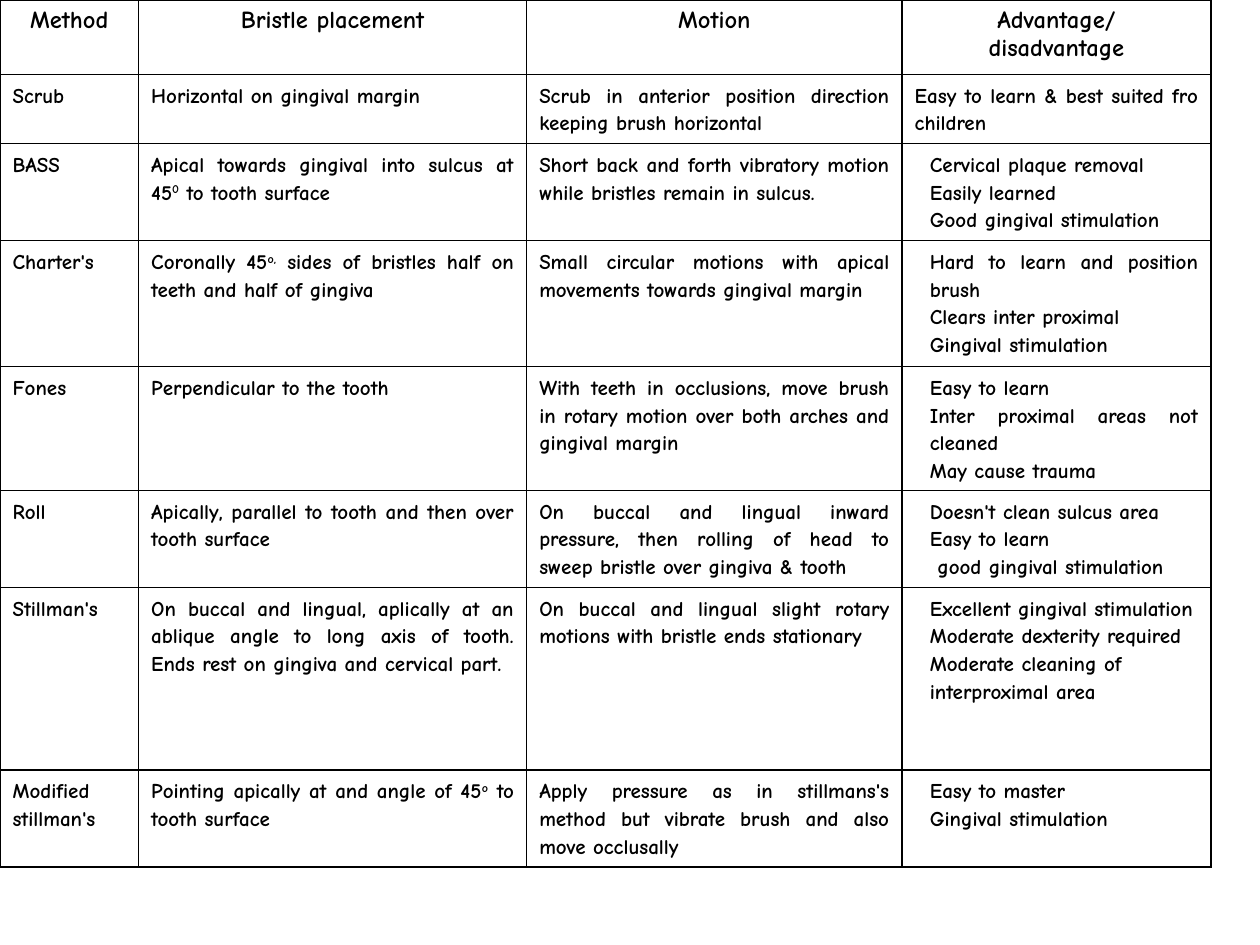
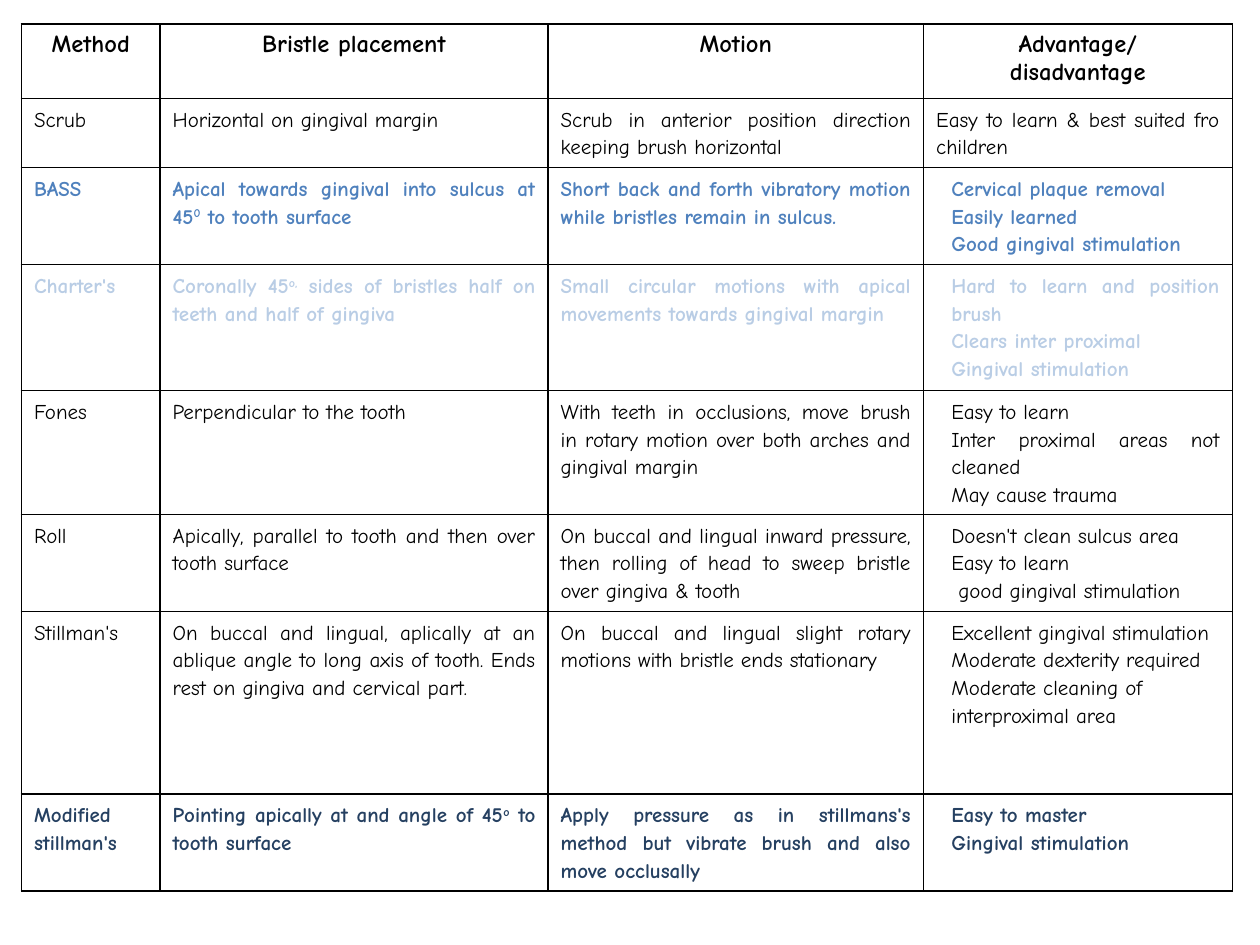
from lxml import etree
from pptx import Presentation
from pptx.dml.color import RGBColor
from pptx.enum.text import PP_ALIGN as Align
from pptx.oxml.ns import qn
from pptx.util import Inches, Pt

FONT = "Comic Neue"
BLACK, WHITE = "000000", "FFFFFF"
BLUE, PALE_BLUE, NAVY = "4F81BD", "B9CDE5", "254061"
SLIDE_WIDTH, SLIDE_HEIGHT = 10, 7.5
COLUMN_WIDTHS = [1.1, 3.08, 2.98, 2.45]
ROW_HEIGHTS = [0.59, 0.55, 0.77, 1, 0.84, 0.77, 1.45, 0.77]
LIST_INDENT = 0.12

# Each cell is a list of paragraphs; ^ marks the start and end of superscript.
HEADINGS = [["Method"], ["Bristle placement"], ["Motion"],
            ["Advantage/", "disadvantage"]]
METHODS = [
    [["Scrub"], ["Horizontal on gingival margin"],
     ["Scrub in anterior position direction keeping brush horizontal"],
     ["Easy to learn & best suited fro children"]],
    [["BASS"], ["Apical towards gingival into sulcus at 45^0^ to tooth surface"],
     ["Short back and forth vibratory motion while bristles remain in sulcus."],
     ["Cervical plaque removal", "Easily learned", "Good gingival stimulation"]],
    [["Charter's"],
     ["Coronally 45^o,^ sides of bristles half on teeth and half of gingiva"],
     ["Small circular motions with apical movements towards gingival margin"],
     ["Hard to learn and position brush", "Clears inter proximal",
      "Gingival stimulation"]],
    [["Fones"], ["Perpendicular to the tooth"],
     ["With teeth in occlusions, move brush in rotary motion over both arches "
      "and gingival margin"],
     ["Easy to learn", "Inter proximal areas not cleaned", "May cause trauma"]],
    [["Roll"], ["Apically, parallel to tooth and then over tooth surface"],
     ["On buccal and lingual inward pressure, then rolling of head to sweep "
      "bristle over gingiva & tooth"],
     ["Doesn't clean sulcus area", "Easy to learn", " good gingival stimulation"]],
    [["Stillman's"],
     ["On buccal and lingual, aplically at an ablique angle to long axis of "
      "tooth. Ends rest on gingiva and cervical part."],
     ["On buccal and lingual slight rotary motions with bristle ends stationary"],
     ["Excellent gingival stimulation", "Moderate dexterity required",
      "Moderate cleaning of interproximal area"]],
    [["Modified stillman's"],
     ["Pointing apically at and angle of 45^o^ to tooth surface"],
     ["Apply pressure as in stillmans's method but vibrate brush and also move "
      "occlusally"],
     ["Easy to master", "Gingival stimulation"]],
]
LEFT_ALIGNED_METHOD = "Stillman's"


def rgb(hex_color):
    return RGBColor.from_string(hex_color)


def set_attributes(target, values):
    for name, value in values.items():
        setattr(target, name, value)


def add_borders(cell):
    properties = cell._tc.get_or_add_tcPr()
    for side in ("lnL", "lnR", "lnT", "lnB"):
        line = etree.SubElement(properties, qn(f"a:{side}"), w=str(Pt(1)))
        fill = etree.SubElement(line, qn("a:solidFill"))
        etree.SubElement(fill, qn("a:srgbClr"), val=BLACK)


def add_runs(paragraph, text, size, color, bold):
    """Add the text as runs, with every second part between ^ raised."""
    for index, part in enumerate(text.split("^")):
        if not part:
            continue
        run = paragraph.add_run()
        run.text = part
        set_attributes(run.font, {"name": FONT, "size": Pt(size), "bold": bold})
        run.font.color.rgb = rgb(color)
        if index % 2:
            run._r.get_or_add_rPr().set("baseline", "30000")


def fill_cell(cell, lines, layout, size, color=BLACK, bold=True, indented=False):
    add_borders(cell)
    cell.fill.solid()
    cell.fill.fore_color.rgb = rgb(WHITE)
    frame = cell.text_frame
    for index, line in enumerate(lines):
        paragraph = frame.add_paragraph() if index else frame.paragraphs[0]
        set_attributes(paragraph, layout)
        if indented:
            paragraph.level = 1
            set_attributes_xml = {"marL": Inches(LIST_INDENT), "indent": 0}
            for name, value in set_attributes_xml.items():
                paragraph._p.get_or_add_pPr().set(name, str(value))
        add_runs(paragraph, line, size, color, bold)


def add_method_row(table, row, method, color, bold):
    name = method[0][0]
    for column, lines in enumerate(method):
        indented = len(lines) > 1
        left = indented and name == LEFT_ALIGNED_METHOD
        layout = {"alignment": Align.LEFT if left else Align.JUSTIFY,
                  "line_spacing": 1.15}
        fill_cell(table.cell(row, column), lines, layout, 12, color, bold, indented)


def add_methods_slide(presentation, left, top, styles, default_style):
    """Add the table; styles maps a method's name to its colour and weight."""
    slide = presentation.slides.add_slide(presentation.slide_layouts[6])
    table = slide.shapes.add_table(
        len(ROW_HEIGHTS), len(COLUMN_WIDTHS), Inches(left), Inches(top),
        Inches(sum(COLUMN_WIDTHS)), Inches(sum(ROW_HEIGHTS))).table
    set_attributes(table, {"first_row": False, "horz_banding": False})
    for column, width in zip(table.columns, COLUMN_WIDTHS):
        column.width = Inches(width)
    for row, height in zip(table.rows, ROW_HEIGHTS):
        row.height = Inches(height)
    for column, lines in enumerate(HEADINGS):
        fill_cell(table.cell(0, column), lines, {"alignment": Align.CENTER}, 14)
    for row, method in enumerate(METHODS, 1):
        color, bold = styles.get(method[0][0], default_style)
        add_method_row(table, row, method, color, bold)


def main():
    presentation = Presentation()
    set_attributes(presentation, {"slide_width": Inches(SLIDE_WIDTH),
                                  "slide_height": Inches(SLIDE_HEIGHT)})
    add_methods_slide(presentation, 0, 0, {}, (BLACK, True))
    highlights = {"BASS": (BLUE, True), "Charter's": (PALE_BLUE, True),
                  "Modified stillman's": (NAVY, True)}
    add_methods_slide(presentation, 0.17, 0.19, highlights, (BLACK, False))
    presentation.save("out.pptx")


if __name__ == "__main__":
    main()
